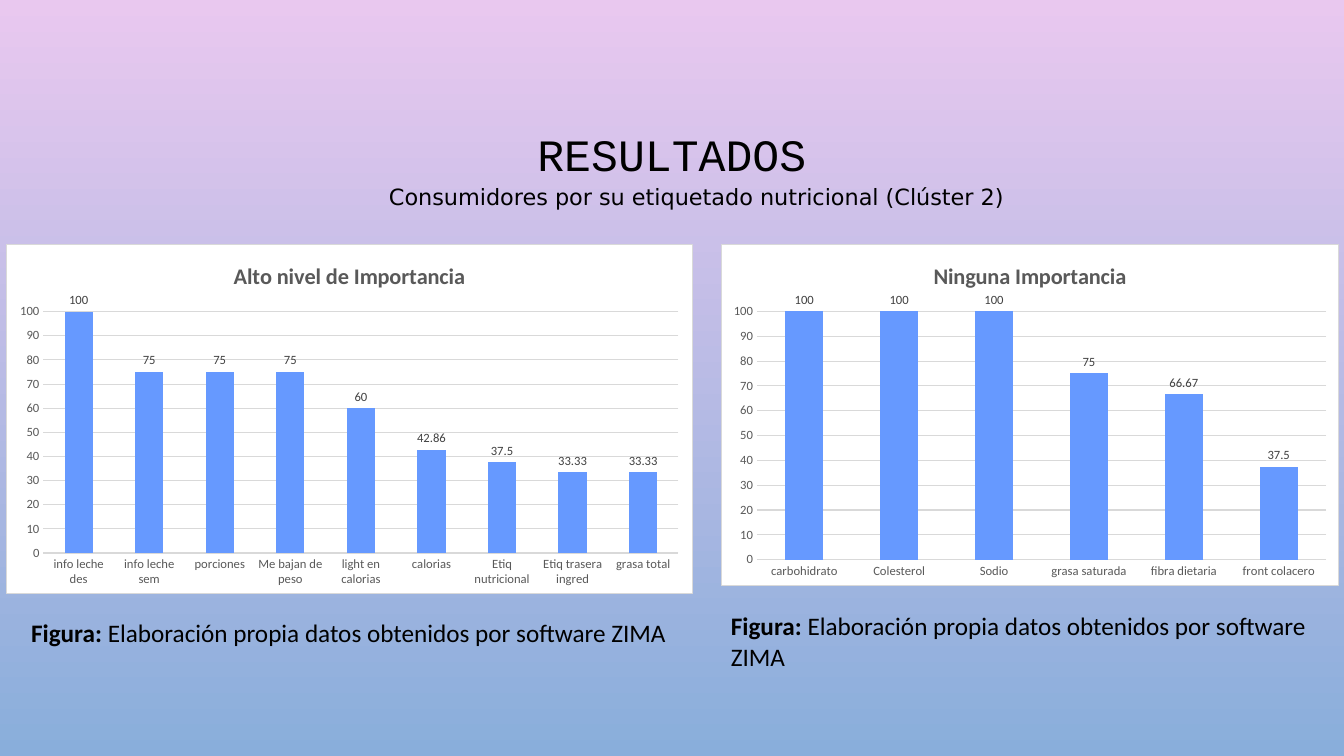
from lxml import etree
from pptx import Presentation
from pptx.chart.data import CategoryChartData
from pptx.dml.color import RGBColor
from pptx.enum.chart import XL_CHART_TYPE as ChartType
from pptx.enum.chart import XL_LABEL_POSITION as LabelPos
from pptx.enum.chart import XL_TICK_MARK as Tick
from pptx.enum.text import MSO_ANCHOR as Anchor
from pptx.enum.text import PP_ALIGN as Align
from pptx.oxml import parse_xml
from pptx.oxml.ns import nsdecls
from pptx.util import Inches, Pt

PINK = RGBColor(0xE9, 0xC8, 0xEF)
SKY = RGBColor(0x89, 0xAE, 0xDB)
BLACK = RGBColor(0, 0, 0)
BAR_BLUE = RGBColor(0x66, 0x99, 0xFF)
GRID_GRAY = RGBColor(0xD9, 0xD9, 0xD9)
AXIS_GRAY = RGBColor(0x59, 0x59, 0x59)
LABEL_GRAY = RGBColor(0x40, 0x40, 0x40)
WHITE = RGBColor(0xFF, 0xFF, 0xFF)

HIGH = {
    "info leche des": 100, "info leche sem": 75, "porciones": 75,
    "Me bajan de peso": 75, "light en calorias": 60, "calorias": 42.86,
    "Etiq nutricional": 37.5, "Etiq trasera ingred": 33.33, "grasa total": 33.33,
}
NONE = {
    "carbohidrato": 100, "Colesterol": 100, "Sodio": 100,
    "grasa saturada": 75, "fibra dietaria": 66.67, "front colacero": 37.5,
}
CAPTION = [("Figura:", True),
           (" Elaboración propia datos obtenidos por software ZIMA", False)]


def set_font(font, name="Calibri", size=9, color=BLACK, bold=False):
    values = {"name": name, "size": Pt(size), "bold": bold}
    for key, value in values.items():
        setattr(font, key, value)
    font.color.rgb = color


def set_line(line, color, width):
    line.color.rgb = color
    line.width = Pt(width)


def add_background(s):
    fill = s.background.fill
    fill.gradient()
    fill.gradient_angle = 270
    for stop, color in zip(fill.gradient_stops, (PINK, SKY)):
        stop.color.rgb = color


def add_text(s, box, runs, name="Calibri", size=18, align=Align.LEFT,
             anchor=Anchor.TOP):
    tf = s.shapes.add_textbox(*map(Inches, box)).text_frame
    tf.word_wrap = True
    tf.vertical_anchor = anchor
    p = tf.paragraphs[0]
    p.alignment = align
    for text, bold in runs:
        r = p.add_run()
        r.text = text
        set_font(r.font, name, size, bold=bold)
    return p


def frame_chart(chart):
    """Give the chart area its white fill and gray border."""
    area = parse_xml(
        f'<c:spPr {nsdecls("c", "a")}><a:solidFill><a:srgbClr val="{WHITE}"/>'
        f'</a:solidFill><a:ln w="{Pt(0.75)}"><a:solidFill>'
        f'<a:srgbClr val="{GRID_GRAY}"/></a:solidFill></a:ln></c:spPr>')
    chart.element.find("{*}chart").addnext(area)


def style_axes(chart):
    cat, val = chart.category_axis, chart.value_axis
    for axis in (cat, val):
        axis.major_tick_mark = axis.minor_tick_mark = Tick.NONE
        set_font(axis.tick_labels.font, color=AXIS_GRAY)
    set_line(cat.format.line, GRID_GRAY, 1)
    # Keep category names horizontal
    cat._element.find("{*}txPr/{*}bodyPr").set("rot", "-60000000")
    scale = {"minimum_scale": 0, "maximum_scale": 100, "major_unit": 10}
    for key, value in scale.items():
        setattr(val, key, value)
    val.format.line.fill.background()
    set_line(val.major_gridlines.format.line, GRID_GRAY, 0.75)


def add_bar_chart(s, box, title, values):
    data = CategoryChartData()
    data.categories = list(values)
    data.add_series("Series 1", list(values.values()))
    chart = s.shapes.add_chart(
        ChartType.COLUMN_CLUSTERED, *map(Inches, box), data).chart
    set_font(chart.font, size=10)
    frame_chart(chart)
    chart.has_legend = False
    chart.has_title = True
    tf = chart.chart_title.text_frame
    tf.text = title
    set_font(tf.paragraphs[0].runs[0].font, size=16, color=AXIS_GRAY, bold=True)
    chart.chart_title.include_in_layout = False
    style_axes(chart)

    # Bars and their values
    plot = chart.plots[0]
    plot.gap_width = 150
    plot.vary_by_categories = False
    fill = plot.series[0].format.fill
    fill.solid()
    fill.fore_color.rgb = BAR_BLUE
    labels = plot.series[0].data_labels
    labels.show_value = True
    labels.position = LabelPos.OUTSIDE_END
    set_font(labels.font, color=LABEL_GRAY)


def main():
    prs = Presentation()
    prs.slide_width, prs.slide_height = Inches(13.33), Inches(7.5)
    s = prs.slides.add_slide(prs.slide_layouts[6])
    add_background(s)

    # Headings
    title = add_text(s, (1, 0.68, 11.33, 1.75), [("RESULTADOS", False)],
                     "Courier New", 32, Align.CENTER, Anchor.MIDDLE)
    title.line_spacing = 0.9
    subtitle = add_text(
        s, (2.06, 1.77, 9.21, 0.37),
        [("Consumidores por su etiquetado nutricional (Clúster 2)", False)],
        "DejaVu Sans", 16, Align.CENTER)
    subtitle._p.get_or_add_pPr().set("indent", str(Inches(0.49)))

    # Charts with their captions
    add_bar_chart(s, (0.06, 2.42, 6.81, 3.47), "Alto nivel de Importancia", HIGH)
    add_bar_chart(s, (7.15, 2.42, 6.13, 3.39), "Ninguna Importancia", NONE)
    for box in ((0.21, 6.08, 6.76, 0.4), (7.15, 6.01, 6.39, 0.71)):
        add_text(s, box, CAPTION)

    prs.save("out.pptx")


if __name__ == "__main__":
    main()
